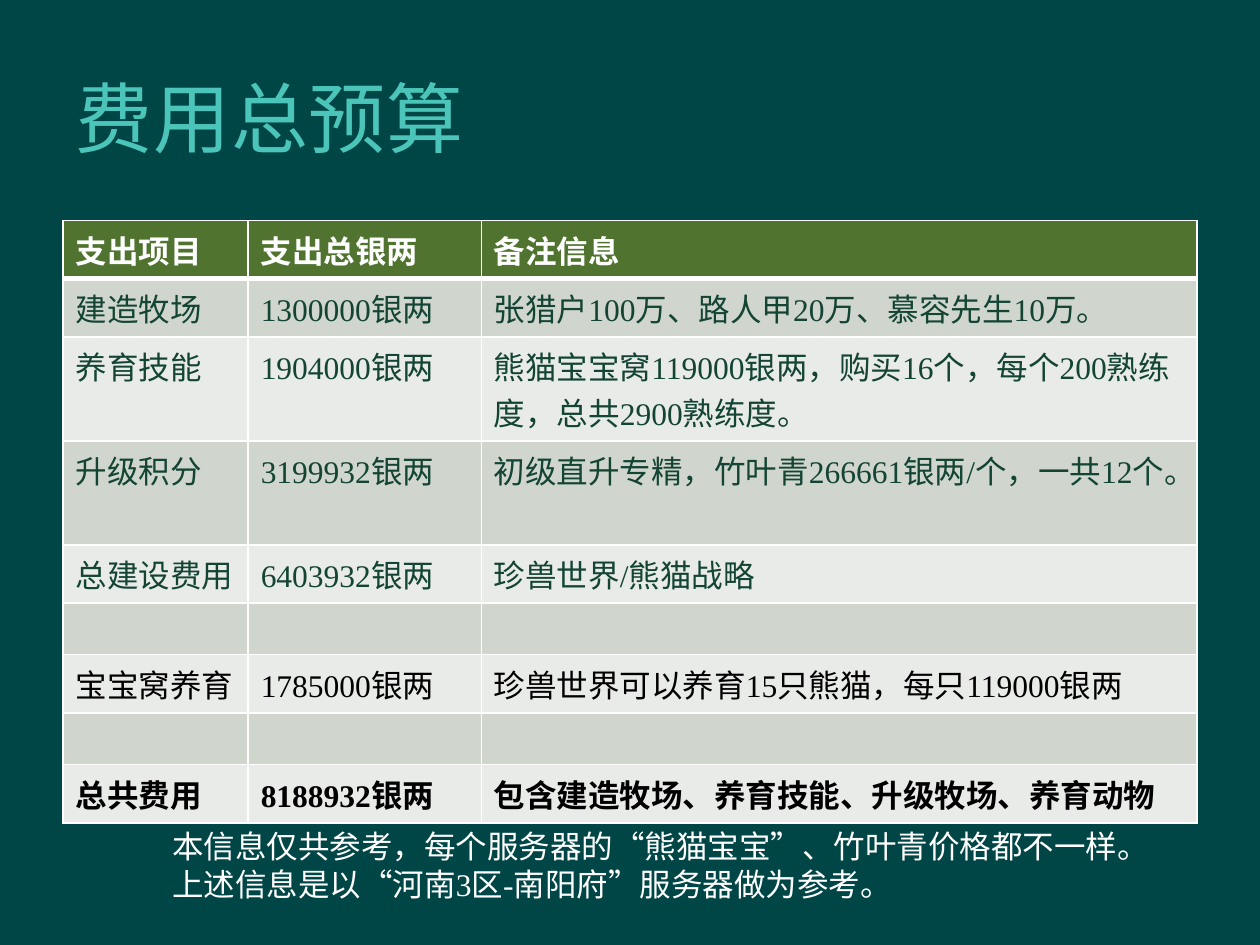
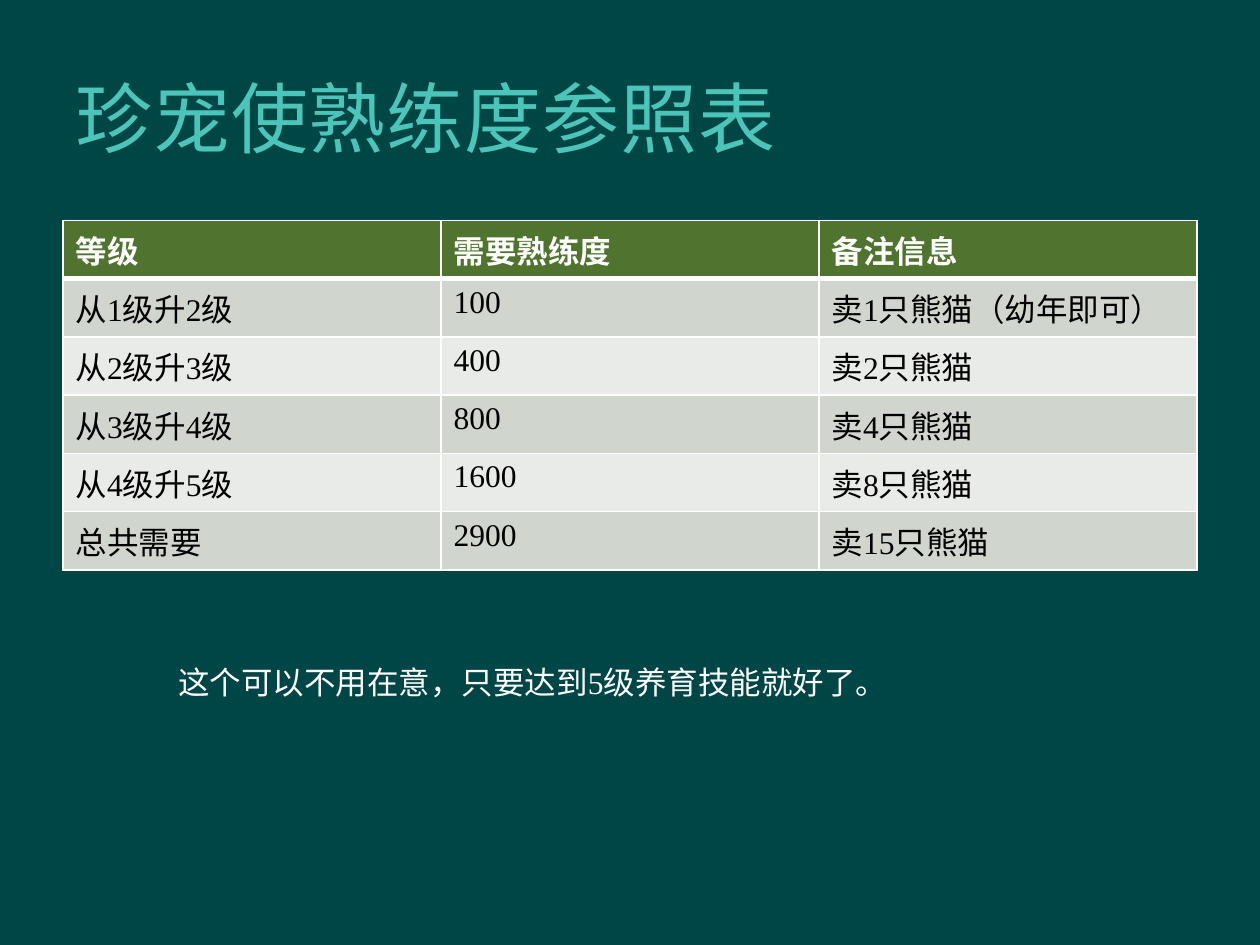
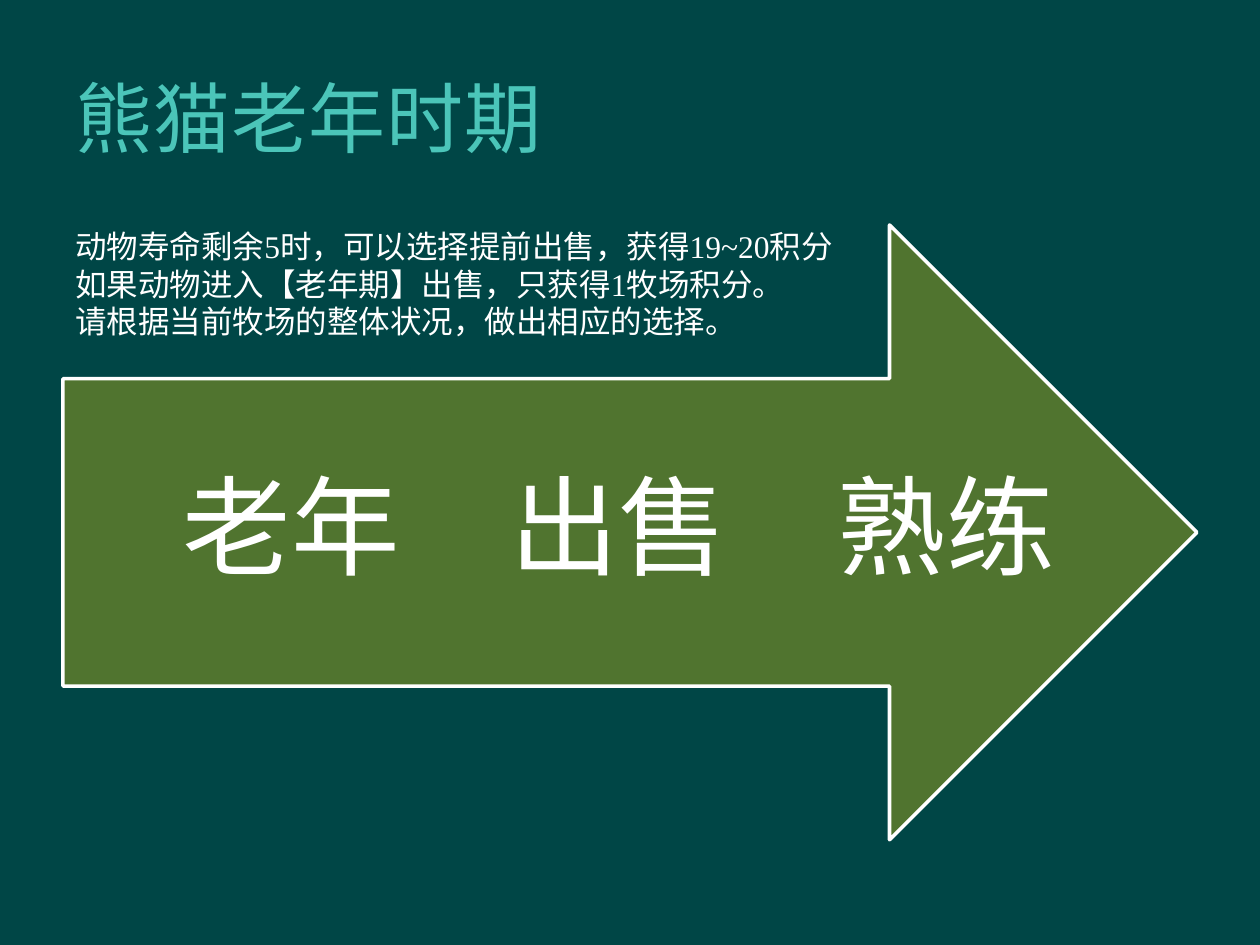
from lxml.etree import SubElement
from pptx import Presentation
from pptx.dml.color import RGBColor
from pptx.enum.shapes import MSO_SHAPE as Shape
from pptx.enum.text import MSO_ANCHOR as Anchor, PP_ALIGN as Align
from pptx.oxml.ns import qn
from pptx.util import Inches, Pt

COLORS = {
    "background": "004646",
    "title": "4BC5B9",
    "green": "50742F",
    "band_dark": "D0D6CD",
    "band_light": "E9EBE8",
    "dark_green": "134434",
    "black": "000000",
    "white": "FFFFFF",
}
TITLE_FONT, BODY_FONT = "Lato", "Times New Roman"
BODY_SIZE = 18

# Grid of 40 columns by 30 rows
UNIT = 0.25
COLUMNS, ROWS = 40, 30
MARGIN = 2
CONTENT_WIDTH = COLUMNS - 2 * MARGIN
CONTENT_TOP = 7
EMPTY_ROW, TEXT_ROW, TWO_LINE_ROW = 1.64, 1.85, 3.3

BUDGET_ROWS = [
    ("支出项目", "支出总银两", "备注信息"),
    ("建造牧场", "1300000银两", "张猎户100万、路人甲20万、慕容先生10万。"),
    ("养育技能", "1904000银两", "熊猫宝宝窝119000银两，购买16个，每个200熟练度，总共2900熟练度。"),
    ("升级积分", "3199932银两", "初级直升专精，竹叶青266661银两/个，一共12个。"),
    ("总建设费用", "6403932银两", "珍兽世界/熊猫战略"),
    ("", "", ""),
    ("宝宝窝养育", "1785000银两", "珍兽世界可以养育15只熊猫，每只119000银两"),
    ("", "", ""),
    ("总共费用", "8188932银两", "包含建造牧场、养育技能、升级牧场、养育动物"),
]
TWO_LINE_BUDGET_ROWS = (2, 3)
SKILL_ROWS = [
    ("等级", "需要熟练度", "备注信息"),
    ("从1级升2级", "100", "卖1只熊猫（幼年即可）"),
    ("从2级升3级", "400", "卖2只熊猫"),
    ("从3级升4级", "800", "卖4只熊猫"),
    ("从4级升5级", "1600", "卖8只熊猫"),
    ("总共需要", "2900", "卖15只熊猫"),
]


def grid(*cells):
    return [Inches(cell * UNIT) for cell in cells]


def color(name):
    return RGBColor.from_string(COLORS[name])


def style(paragraph, size, color_name, font=BODY_FONT, bold=False):
    paragraph.font.name = font
    paragraph.font.size = Pt(size)
    paragraph.font.bold = bold
    paragraph.font.color.rgb = color(color_name)


def add_text(slide, box, lines, size=BODY_SIZE, color_name="white",
             font=BODY_FONT, anchor=Anchor.TOP):
    frame = slide.shapes.add_textbox(*grid(*box)).text_frame
    frame.word_wrap = True
    frame.vertical_anchor = anchor
    frame.text = "\n".join(lines)
    for paragraph in frame.paragraphs:
        style(paragraph, size, color_name, font)
    return frame


def add_titled_slide(presentation, title):
    slide = presentation.slides.add_slide(presentation.slide_layouts[6])
    frame = add_text(slide, (MARGIN, 1.2, 34, 5), [title], 44, "title",
                     TITLE_FONT, Anchor.MIDDLE)
    frame.paragraphs[0].runs[0]._r.get_or_add_rPr().set("spc", "50")
    return slide


def set_borders(cell, bottom_width):
    properties = cell._tc.get_or_add_tcPr()
    widths = {"a:lnL": 1, "a:lnR": 1, "a:lnT": 1, "a:lnB": bottom_width}
    # Borders come before the fill in the cell properties
    for index, (tag, width) in enumerate(widths.items()):
        line = SubElement(properties, qn(tag), w=str(Pt(width)))
        fill = SubElement(line, qn("a:solidFill"))
        SubElement(fill, qn("a:srgbClr"), val=COLORS["white"])
        properties.insert(index, line)


def row_height(row, texts, two_line_rows):
    if row in two_line_rows:
        return TWO_LINE_ROW
    return TEXT_ROW if any(texts) else EMPTY_ROW


def add_grid_table(slide, rows, widths, row_style, two_line_rows=()):
    heights = [row_height(r, texts, two_line_rows) for r, texts in enumerate(rows)]
    box = grid(MARGIN, CONTENT_TOP, CONTENT_WIDTH, sum(heights))
    table = slide.shapes.add_table(len(rows), len(widths), *box).table
    for column, width in zip(table.columns, grid(*widths)):
        column.width = width
    for row, height in zip(table.rows, grid(*heights)):
        row.height = height
    for r, texts in enumerate(rows):
        text_color, bold = ("white", True) if r == 0 else row_style(r)
        band = "green" if r == 0 else ("band_light", "band_dark")[r % 2]
        for c, text in enumerate(texts):
            cell = table.cell(r, c)
            cell.text = text
            style(cell.text_frame.paragraphs[0], BODY_SIZE, text_color, bold=bold)
            cell.fill.solid()
            cell.fill.fore_color.rgb = color(band)
            set_borders(cell, 3 if r == 0 else 1)


def add_arrow(slide, steps):
    arrow = slide.shapes.add_shape(
        Shape.RIGHT_ARROW, *grid(MARGIN, 7.14, CONTENT_WIDTH, 19.52))
    arrow.shadow.inherit = False
    arrow.fill.solid()
    arrow.fill.fore_color.rgb = color("green")
    arrow.line.color.rgb = color("white")
    arrow.line.width = Pt(2)
    # Evenly spaced step labels
    for index, step in enumerate(steps):
        frame = add_text(slide, (4.91 + 10.4 * index, 12.03, 8.68, 9.76), [step],
                         62, anchor=Anchor.MIDDLE)
        frame.margin_left = frame.margin_right = 0
        frame.margin_top = frame.margin_bottom = Inches(0.69)
        frame.paragraphs[0].alignment = Align.CENTER
        frame.paragraphs[0].line_spacing = 0.9


def budget_style(row):
    last = len(BUDGET_ROWS) - 1
    return ("dark_green" if row < 5 else "black"), row == last


def main():
    presentation = Presentation()
    presentation.slide_width, presentation.slide_height = grid(COLUMNS, ROWS)
    background = presentation.slide_master.background.fill
    background.solid()
    background.fore_color.rgb = color("background")

    # Budget
    slide = add_titled_slide(presentation, "费用总预算")
    add_grid_table(slide, BUDGET_ROWS, (5.88, 7.4, 22.72), budget_style,
                   TWO_LINE_BUDGET_ROWS)
    add_text(slide, (5.08, 26.06, 32.12, 2.84), [
        "本信息仅共参考，每个服务器的“熊猫宝宝”、竹叶青价格都不一样。",
        "上述信息是以“河南3区-南阳府”服务器做为参考。",
    ])

    # Skill levels
    slide = add_titled_slide(presentation, "珍宠使熟练度参照表")
    add_grid_table(slide, SKILL_ROWS, [CONTENT_WIDTH / 3] * 3,
                   lambda row: ("black", False))
    add_text(slide, (5.27, 20.84, 24, 1.6),
             ["这个可以不用在意，只要达到5级养育技能就好了。"])

    # Old age
    slide = add_titled_slide(presentation, "熊猫老年时期")
    add_arrow(slide, ["老年", "出售", "熟练"])
    add_text(slide, (MARGIN, CONTENT_TOP, 25.16, 4.04), [
        "动物寿命剩余5时，可以选择提前出售，获得19~20积分",
        "如果动物进入【老年期】出售，只获得1牧场积分。",
        "请根据当前牧场的整体状况，做出相应的选择。",
    ])

    presentation.save("out.pptx")


if __name__ == "__main__":
    main()
